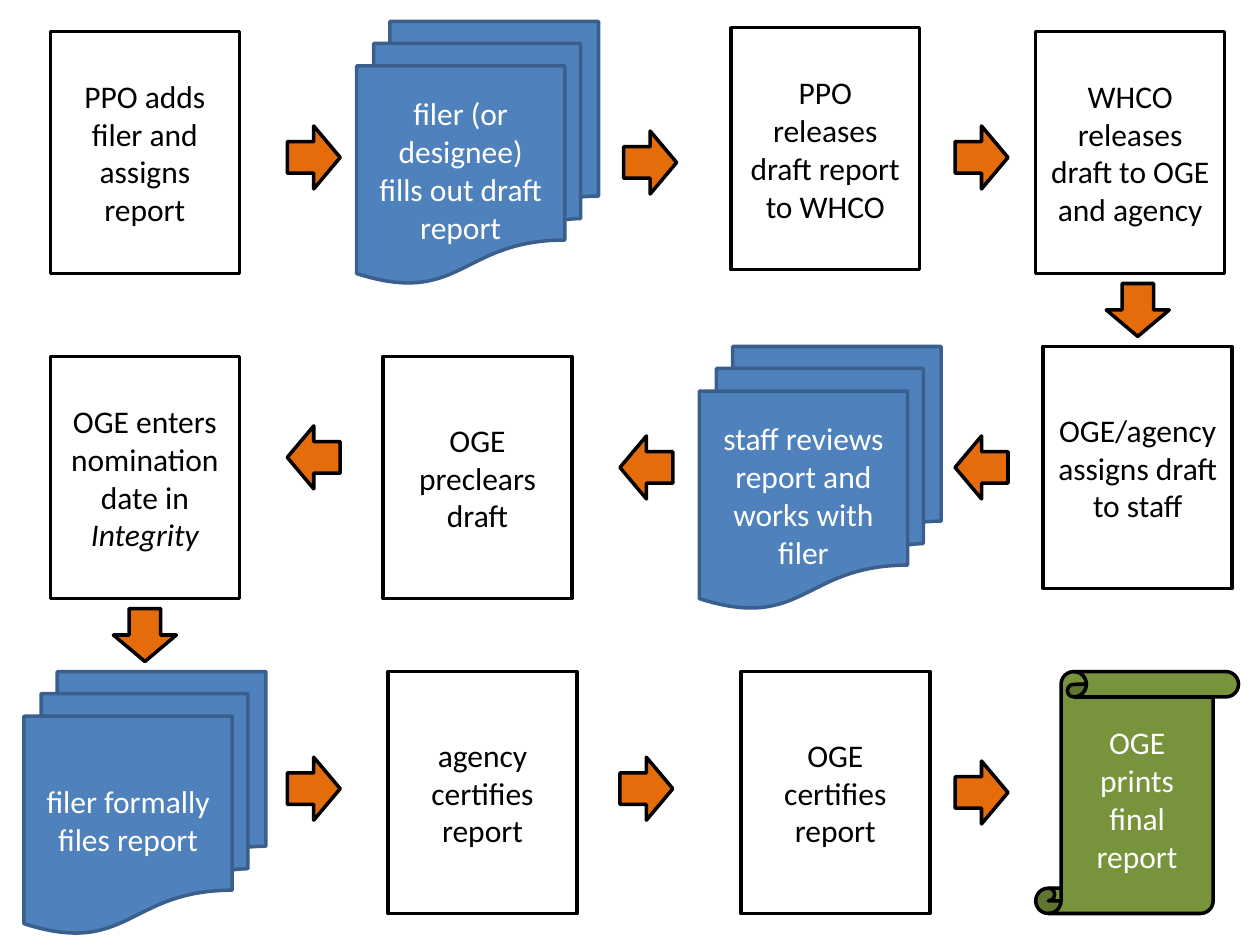
from dataclasses import dataclass

from pptx import Presentation
from pptx.dml.color import RGBColor
from pptx.enum.shapes import MSO_SHAPE as Shape
from pptx.enum.text import MSO_ANCHOR as Anchor, PP_ALIGN as Align
from pptx.util import Inches, Pt


@dataclass(frozen=True)
class Theme:
    """Colours, font and sizes of the flow chart."""
    font: str = "Calibri"
    text_size: int = 18
    line_width: int = 2
    black: str = "000000"
    white: str = "FFFFFF"
    blue: str = "4F81BD"
    dark_blue: str = "3A5F8C"
    green: str = "77933C"
    orange: str = "E46C0A"


class FlowChart:
    """Draws process steps and arrows on a grid of 100 columns by 75 rows."""

    COLUMNS, ROWS = 100, 75
    STEP = (15, 19.2)
    STACK = (19.2, 20.8)
    SCROLL = (16.1, 19.2)
    ARROW = (4.2, 5)

    def __init__(self, presentation, theme):
        self.theme = theme
        self.slide = presentation.slides.add_slide(presentation.slide_layouts[6])
        self.column = presentation.slide_width / self.COLUMNS
        self.row = presentation.slide_height / self.ROWS

    def shape(self, kind, column, row, size, fill, line):
        width, height = size
        shape = self.slide.shapes.add_shape(
            kind, round(column * self.column), round(row * self.row),
            round(width * self.column), round(height * self.row))
        shape.shadow.inherit = False
        shape.fill.solid()
        shape.fill.fore_color.rgb = RGBColor.from_string(fill)
        shape.line.color.rgb = RGBColor.from_string(line)
        shape.line.width = Pt(self.theme.line_width)
        return shape

    def label(self, shape, text, colour, italic_text=""):
        text_frame = shape.text_frame
        text_frame.word_wrap = True
        text_frame.vertical_anchor = Anchor.MIDDLE
        text_frame.text = text
        if italic_text:
            run = text_frame.paragraphs[-1].add_run()
            run.text = italic_text
            run.font.italic = True
        for paragraph in text_frame.paragraphs:
            paragraph.alignment = Align.CENTER
            for run in paragraph.runs:
                run.font.name = self.theme.font
                run.font.size = Pt(self.theme.text_size)
                run.font.color.rgb = RGBColor.from_string(colour)

    def step(self, column, row, text, italic_text=""):
        theme = self.theme
        shape = self.shape(Shape.RECTANGLE, column, row, self.STEP, theme.white, theme.black)
        self.label(shape, text, theme.black, italic_text)

    def stack(self, column, row, text):
        theme = self.theme
        shape = self.shape(Shape.FLOWCHART_MULTIDOCUMENT, column, row, self.STACK,
                           theme.blue, theme.dark_blue)
        self.label(shape, text, theme.white)

    def scroll(self, column, row, text):
        theme = self.theme
        shape = self.shape(Shape.VERTICAL_SCROLL, column, row, self.SCROLL,
                           theme.green, theme.black)
        self.label(shape, text, theme.white)

    def arrow(self, column, row, rotation):
        theme = self.theme
        shape = self.shape(Shape.RIGHT_ARROW, column, row, self.ARROW,
                           theme.orange, theme.black)
        shape.rotation = rotation


STEPS = [
    (4, 2.5, "PPO adds filer and assigns report"),
    (58, 2.2, "PPO releases draft report to WHCO"),
    (82.2, 2.5, "WHCO releases draft to OGE and agency"),
    (82.8, 27.5, "OGE/agency assigns draft to staff"),
    (30.4, 28.3, "OGE preclears draft"),
    (4, 28.3, "OGE enters nomination date in ", "Integrity"),
    (30.8, 53.3, "agency certifies report"),
    (58.8, 53.3, "OGE certifies report"),
]
STACKS = [
    (28.3, 1.7, "filer (or\ndesignee)\nfills out draft report"),
    (55.5, 27.5, "staff reviews report and works with filer"),
    (1.9, 53.3, "filer formally files report"),
]
RIGHT, DOWN, LEFT = 0, 90, 180
ARROWS = {
    RIGHT: [(22.8, 10), (49.5, 10.4), (75.8, 10),
            (22.8, 60.1), (49.2, 60.1), (75.8, 60.4)],
    DOWN: [(88.2, 22.1), (9.4, 47.9)],
    LEFT: [(75.8, 34.6), (49.2, 34.6), (22.8, 33.8)],
}


def main():
    presentation = Presentation()
    presentation.slide_width = Inches(10)
    presentation.slide_height = Inches(7.5)
    chart = FlowChart(presentation, Theme())
    for step in STEPS:
        chart.step(*step)
    for stack in STACKS:
        chart.stack(*stack)
    chart.scroll(82.2, 53.3, "OGE prints\nfinal\nreport")
    for rotation, places in ARROWS.items():
        for column, row in places:
            chart.arrow(column, row, rotation)
    presentation.save("out.pptx")


if __name__ == "__main__":
    main()
